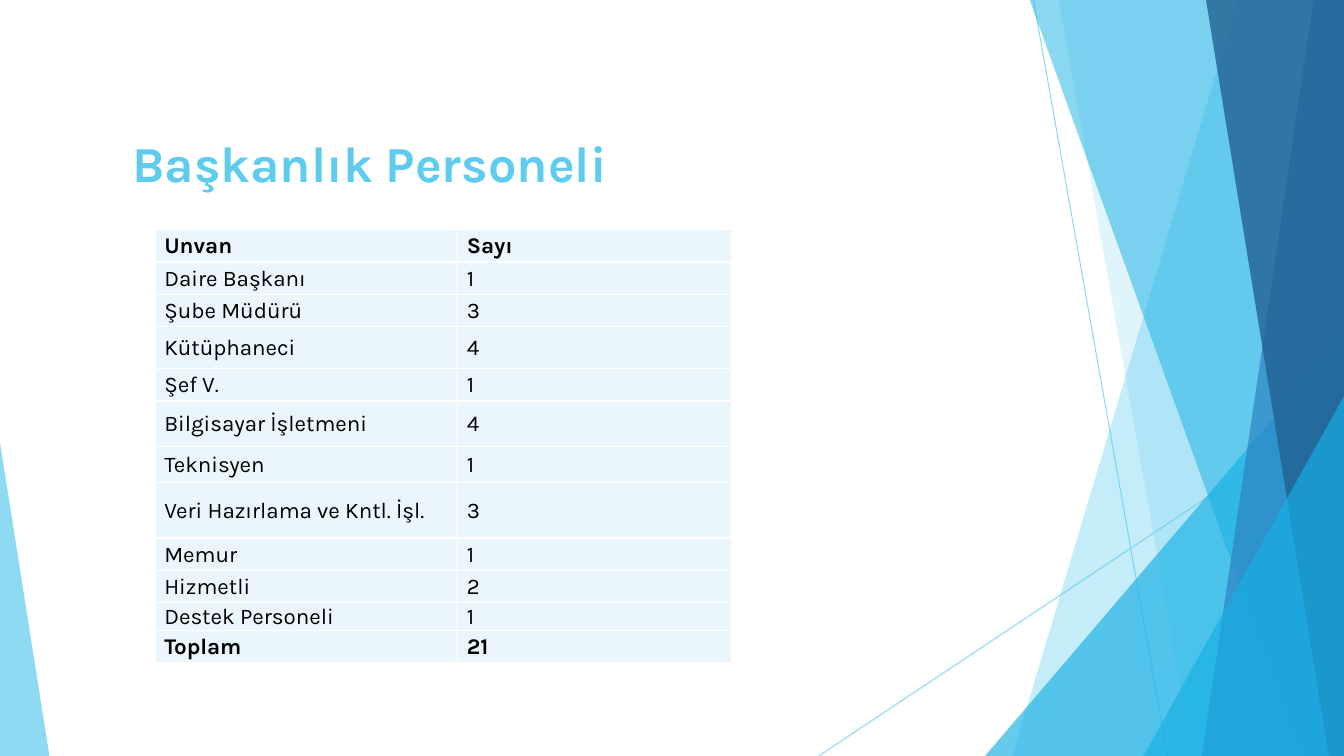
from dataclasses import dataclass

from lxml.etree import SubElement
from pptx import Presentation
from pptx.dml.color import RGBColor
from pptx.enum.shapes import MSO_CONNECTOR, MSO_SHAPE
from pptx.enum.text import MSO_ANCHOR, PP_ALIGN
from pptx.oxml import parse_xml
from pptx.oxml.ns import nsdecls, qn
from pptx.shapes.autoshape import Shape
from pptx.slide import Slide
from pptx.table import _Cell
from pptx.text.text import _Paragraph
from pptx.util import Emu, Pt

PX = 9144  # EMU, 100 px to the inch
WIDTH, HEIGHT = 1333, 750
BAND_TOP = -1
FONT = "Karla"
COLORS = {
    "sky": "5FCBEF",
    "cyan": "17B0E4",
    "blue": "2E83C3",
    "navy": "226292",
    "cell": "EAF6FC",
    "border": "FFFFFF",
    "text": "000000",
}


@dataclass(frozen=True)
class Ray:
    start: tuple[int, int]
    end: tuple[int, int]


@dataclass(frozen=True)
class Band:
    """A full-height panel with a slanted left side, reaching the right edge."""
    top_x: int
    bottom_x: int
    color: str
    opacity: int


@dataclass(frozen=True)
class Corner:
    """A right triangle standing on the bottom edge; apex is 0 left, 1 right."""
    left: int
    top: int
    width: int
    apex: int
    color: str
    opacity: int


@dataclass(frozen=True)
class StaffRow:
    position: str
    count: str
    height: int = 32
    bold: bool = False


RAYS = [Ray((1025, 0), (1158, HEIGHT)), Ray((WIDTH, 403), (812, HEIGHT))]
FACETS = [
    Band(1228, 1004, "sky", 36),
    Band(1050, 1183, "sky", 20),
    Corner(977, 333, 356, 1, "cyan", 66),
    Band(1021, 1291, "cyan", 50),
    Band(1303, 1192, "blue", 70),
    Band(1196, 1318, "navy", 80),
    Corner(1134, 393, 199, 1, "cyan", 66),
    Corner(0, 439, 49, 0, "sky", 70),
]
COLUMN_WIDTHS = [300, 272]
STAFF = [
    StaffRow("Unvan", "Sayı", bold=True),
    StaffRow("Daire Başkanı", "1"),
    StaffRow("Şube Müdürü", "3"),
    StaffRow("Kütüphaneci", "4", 42),
    StaffRow("Şef V.", "1"),
    StaffRow("Bilgisayar İşletmeni", "4", 45),
    StaffRow("Teknisyen", "1", 36),
    StaffRow("Veri Hazırlama ve Kntl. İşl.", "3", 55),
    StaffRow("Memur", "1"),
    StaffRow("Hizmetli", "2"),
    StaffRow("Destek Personeli", "1", 28),
    StaffRow("Toplam", "21", bold=True),
]


def px(length: int) -> Emu:
    return Emu(length * PX)


def rgb(color: str) -> RGBColor:
    return RGBColor.from_string(COLORS[color])


def set_opacity(element, percent: int) -> None:
    for color in element.iter(qn("a:srgbClr")):
        SubElement(color, qn("a:alpha"), val=str(percent * 1000))


def set_font(paragraph: _Paragraph, size: int, color: str, bold: bool) -> None:
    font = paragraph.font
    font.name, font.size, font.bold = FONT, Pt(size), bold
    font.color.rgb = rgb(color)


def add_ray(slide: Slide, ray: Ray) -> None:
    line = slide.shapes.add_connector(
        MSO_CONNECTOR.STRAIGHT, *map(px, ray.start + ray.end))
    line.line.color.rgb = rgb("sky")
    line.line.width = Pt(0.75)
    properties = line._element.spPr
    set_opacity(properties, 70)
    SubElement(properties, qn("a:effectLst"))


def draw_band(slide: Slide, band: Band) -> Shape:
    outline = slide.shapes.build_freeform(band.top_x, BAND_TOP, scale=PX)
    outline.add_line_segments(
        [(WIDTH, BAND_TOP), (WIDTH, HEIGHT), (band.bottom_x, HEIGHT)])
    return outline.convert_to_shape()


def draw_corner(slide: Slide, corner: Corner) -> Shape:
    triangle = slide.shapes.add_shape(
        MSO_SHAPE.ISOSCELES_TRIANGLE, px(corner.left), px(corner.top),
        px(corner.width), px(HEIGHT - corner.top))
    triangle.adjustments[0] = corner.apex
    return triangle


def add_facet(slide: Slide, facet: Band | Corner) -> None:
    draw = draw_band if isinstance(facet, Band) else draw_corner
    shape = draw(slide, facet)
    shape.shadow.inherit = False
    shape.line.fill.background()
    shape.fill.solid()
    shape.fill.fore_color.rgb = rgb(facet.color)
    set_opacity(shape._element.spPr, facet.opacity)


def set_title(slide: Slide, text: str) -> None:
    title = slide.shapes.title
    title.left, title.top, title.width, title.height = map(
        px, (61, 123, 940, 144))
    frame = title.text_frame
    frame.text = text
    frame.word_wrap = True
    frame.vertical_anchor = MSO_ANCHOR.TOP
    frame.margin_left, frame.margin_top = px(70), px(8)
    heading = frame.paragraphs[0]
    heading.alignment = PP_ALIGN.LEFT
    set_font(heading, 36, "sky", True)


def fill_cell(cell: _Cell, text: str, bold: bool) -> None:
    cell.text = text
    cell.vertical_anchor = MSO_ANCHOR.MIDDLE
    cell.margin_left, cell.margin_top = px(9), px(1)
    cell.margin_right, cell.margin_bottom = px(1), px(0)
    set_font(cell.text_frame.paragraphs[0], 16, "text", bold)
    cell.fill.solid()
    cell.fill.fore_color.rgb = rgb("cell")
    for index, side in enumerate(("lnL", "lnR", "lnT", "lnB")):
        border = parse_xml(
            f'<a:{side} {nsdecls("a")} w="{Pt(1)}"><a:solidFill>'
            f'<a:srgbClr val="{COLORS["border"]}"/></a:solidFill></a:{side}>')
        cell._tc.get_or_add_tcPr().insert(index, border)


def add_staff_table(slide: Slide) -> None:
    table = slide.shapes.add_table(
        len(STAFF), len(COLUMN_WIDTHS), px(154), px(228),
        px(sum(COLUMN_WIDTHS)), px(sum(staff.height for staff in STAFF))).table
    table.first_row = table.horz_banding = False
    for column, width in zip(table.columns, COLUMN_WIDTHS):
        column.width = px(width)
    for row, staff in zip(table.rows, STAFF):
        row.height = px(staff.height)
        for cell, text in zip(row.cells, (staff.position, staff.count)):
            fill_cell(cell, text, staff.bold)


def main() -> None:
    deck = Presentation()
    deck.slide_width, deck.slide_height = px(WIDTH), px(HEIGHT)
    slide = deck.slides.add_slide(deck.slide_layouts.get_by_name("Title Only"))
    for ray in RAYS:
        add_ray(slide, ray)
    for facet in FACETS:
        add_facet(slide, facet)
    set_title(slide, "Başkanlık Personeli")
    add_staff_table(slide)
    deck.save("out.pptx")


if __name__ == "__main__":
    main()
